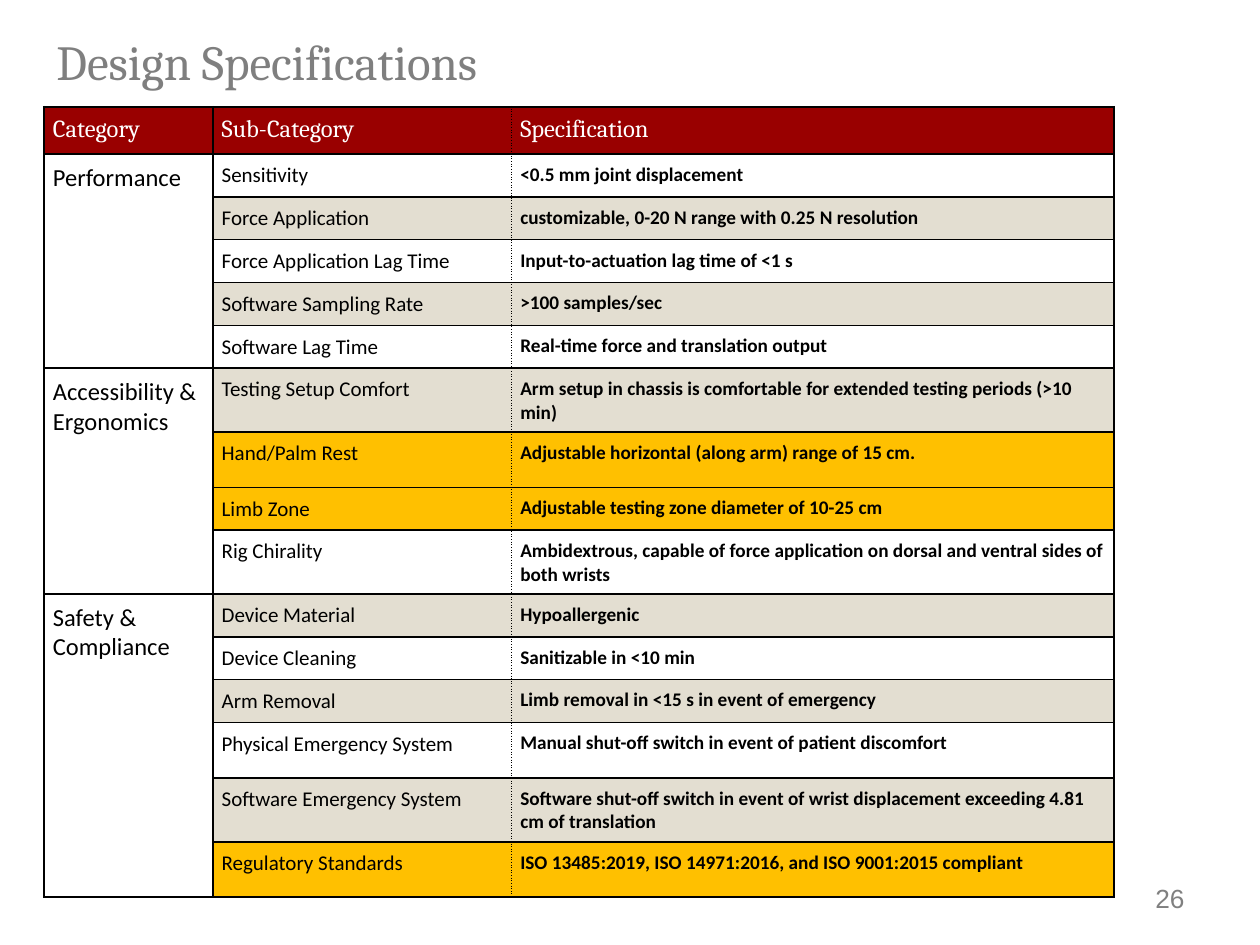
from lxml import etree
from pptx import Presentation
from pptx.dml.color import RGBColor
from pptx.enum import text
from pptx.oxml.ns import qn
from pptx.util import Inches, Pt

COLORS = {"header": "990000", "band": "E3DED1", "flag": "FFC000", "line": "000000",
          "body": "000000", "light": "FFFFFF", "title": "7F7F7F", "number": "808080"}
HEADERS = ["Category", "Sub-Category", "Specification"]
# (category, [(sub-category, specification, row height, flagged)])
GROUPS = [
    ("Performance", [
        ("Sensitivity", "<0.5 mm joint displacement", 0.33, False),
        ("Force Application", "customizable, 0-20 N range with 0.25 N resolution", 0.33, False),
        ("Force Application Lag Time", "Input-to-actuation lag time of <1 s", 0.33, False),
        ("Software Sampling Rate", ">100 samples/sec", 0.33, False),
        ("Software Lag Time", "Real-time force and translation output", 0.33, False),
    ]),
    ("Accessibility & Ergonomics", [
        ("Testing Setup Comfort",
         "Arm setup in chassis is comfortable for extended testing periods (>10 min)", 0.47, False),
        ("Hand/Palm Rest", "Adjustable horizontal (along arm) range of 15 cm.", 0.44, True),
        ("Limb Zone", "Adjustable testing zone diameter of 10-25 cm", 0.33, True),
        ("Rig Chirality", "Ambidextrous, capable of force application on dorsal and "
         "ventral sides of both wrists", 0.47, False),
    ]),
    ("Safety & Compliance", [
        ("Device Material", "Hypoallergenic", 0.33, False),
        ("Device Cleaning", "Sanitizable in <10 min", 0.33, False),
        ("Arm Removal", "Limb removal in <15 s in event of emergency", 0.33, False),
        ("Physical Emergency System",
         "Manual shut-off switch in event of patient discomfort", 0.44, False),
        ("Software Emergency System", "Software shut-off switch in event of wrist "
         "displacement exceeding 4.81 cm of translation", 0.47, False),
        ("Regulatory Standards",
         "ISO 13485:2019, ISO 14971:2016, and ISO 9001:2015 compliant", 0.44, True),
    ]),
]
COL_WIDTHS = [1.34, 2.37, 4.78]
HEADER_HEIGHT = 0.34
THIN, THICK = 1, 1.5


def add_run(p, content, size, font, color, bold=False):
    r = p.add_run()
    r.text = content
    r.font.size, r.font.name, r.font.bold = Pt(size), font, bold
    r.font.color.rgb = RGBColor.from_string(COLORS[color])


def add_label(slide, box, content, size, font, color, align, anchor):
    tf = slide.shapes.add_textbox(*map(Inches, box)).text_frame
    tf.word_wrap = True
    tf.vertical_anchor = anchor
    tf.paragraphs[0].alignment = align
    add_run(tf.paragraphs[0], content, size, font, color)


def set_borders(cell, col, left, right, top, bottom):
    """Widths in points; the edge between the last two columns is dotted."""
    tc_pr = cell._tc.get_or_add_tcPr()
    dotted = {1: "R", 2: "L"}.get(col)
    for side, width in zip("LRTB", (left, right, top, bottom)):
        ln = etree.SubElement(tc_pr, qn(f"a:ln{side}"), w=str(Pt(width)))
        fill = etree.SubElement(ln, qn("a:solidFill"))
        etree.SubElement(fill, qn("a:srgbClr"), val=COLORS["line"])
        etree.SubElement(ln, qn("a:prstDash"), val="sysDot" if side == dotted else "solid")


def style_cell(cell, col, borders, fill=None):
    cell.margin_left = cell.margin_right = Inches(0.07)
    cell.margin_top = cell.margin_bottom = Inches(0.07)
    set_borders(cell, col, *borders)
    if fill:
        cell.fill.solid()
        cell.fill.fore_color.rgb = RGBColor.from_string(COLORS[fill])
    else:
        cell.fill.background()


def write_cell(cell, *run):
    add_run(cell.text_frame.paragraphs[0], *run)


def add_spec_table(slide):
    heights = [HEADER_HEIGHT] + [spec[2] for _, specs in GROUPS for spec in specs]
    frame = slide.shapes.add_table(len(heights), len(COL_WIDTHS), Inches(0.35), Inches(0.85),
                                   Inches(sum(COL_WIDTHS)), Inches(sum(heights)))
    table = frame.table
    table.first_row = table.horz_banding = False
    for column, width in zip(table.columns, COL_WIDTHS):
        column.width = Inches(width)
    for table_row, height in zip(table.rows, heights):
        table_row.height = Inches(height)

    for col, header in enumerate(HEADERS):
        cell = table.cell(0, col)
        style_cell(cell, col, (THICK if col == 0 else THIN, THICK if col == 2 else THIN,
                               THICK, THICK), "header")
        write_cell(cell, header, 14, "Cambria", "light")

    row = 1
    for category, specs in GROUPS:
        first, last = row, row + len(specs) - 1
        category_bottom = THIN if last == len(heights) - 1 else THICK
        for name, value, _, flagged in specs:
            style_cell(table.cell(row, 0), 0, (THIN, THIN, THICK, category_bottom))
            borders = (THIN, THIN, THICK if row == first else THIN,
                       THICK if row == last else THIN)
            fill = "flag" if flagged else "band" if row % 2 == 0 else None
            for col in (1, 2):
                style_cell(table.cell(row, col), col, borders, fill)
            write_cell(table.cell(row, 1), name, 12, "Calibri", "body")
            write_cell(table.cell(row, 2), value, 11, "Calibri", "body", True)
            row += 1
        table.cell(first, 0).merge(table.cell(last, 0))
        write_cell(table.cell(first, 0), category, 14, "Calibri", "body")


def main():
    prs = Presentation()
    prs.slide_width, prs.slide_height = Inches(10), Inches(7.5)
    slide = prs.slides.add_slide(prs.slide_layouts[6])
    add_label(slide, (7.06, 6.95, 2.44, 0.4), "26", 15, "Arial", "number",
              text.PP_ALIGN.RIGHT, text.MSO_ANCHOR.TOP)
    add_spec_table(slide)
    add_label(slide, (0.35, 0.12, 9, 0.73), "Design Specifications", 28, "Cambria", "title",
              text.PP_ALIGN.LEFT, text.MSO_ANCHOR.MIDDLE)
    prs.save("out.pptx")


if __name__ == "__main__":
    main()
